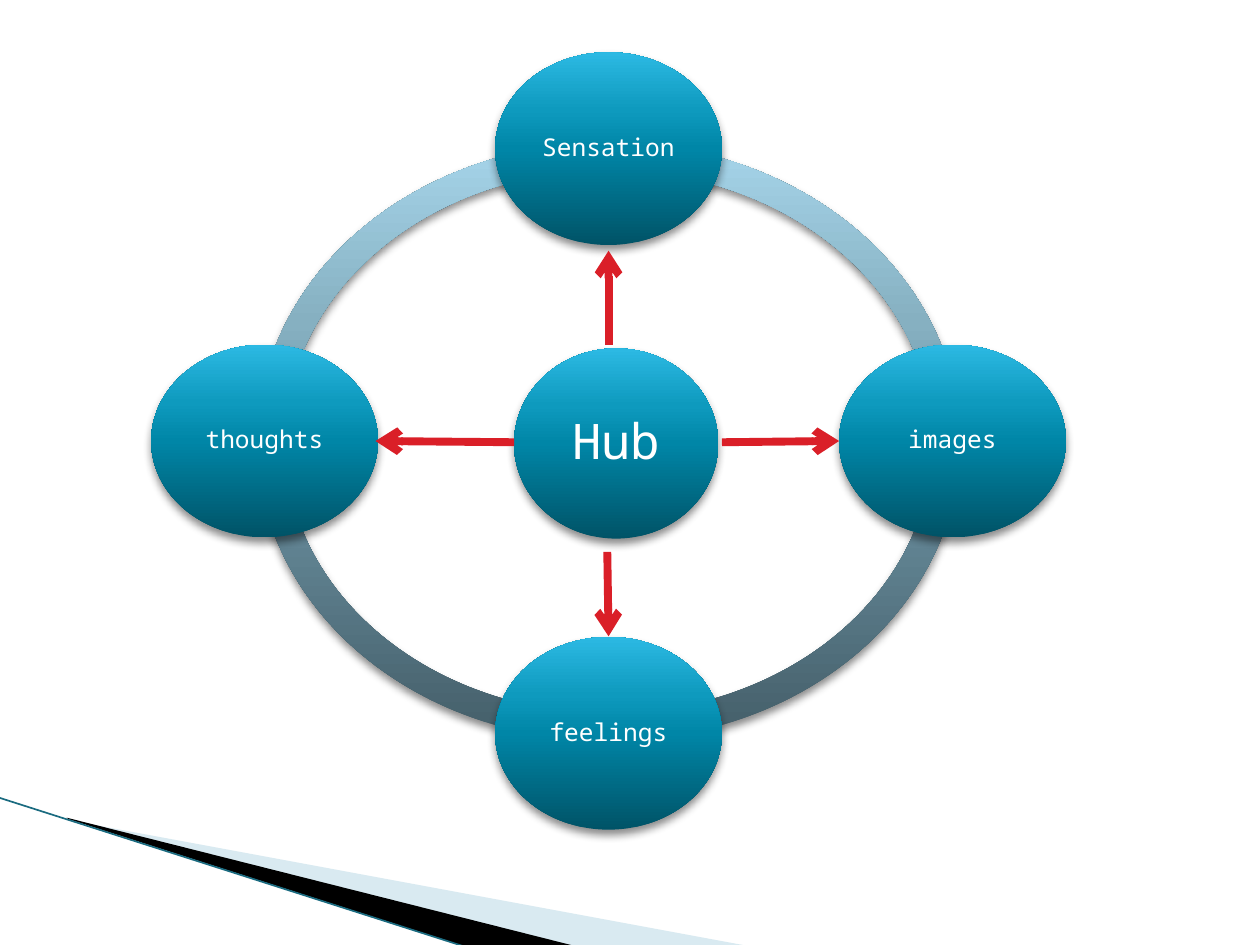
import pptx
import pptx.dml.color
import pptx.enum.shapes
import pptx.enum.text
import pptx.oxml
import pptx.oxml.ns
import pptx.util
from pptx.util import Inches

COLORS = {
    "arrow": "DA1F28",
    "text": "FFFFFF",
    "pale": "A0CBDC",
    "black": "000000",
    "edge": "1A6B80",
}
# Gradient stops, percent to colour, running from bottom to top
GRADIENTS = {
    "ring": {0: "445E69", 50: "6F96A7", 70: "86B0C1", 100: "A6D5EA"},
    "node": {0: "005367", 50: "0086A7", 70: "0E9ABE", 100: "2CB9E3"},
}
FONT = "Noto Sans Mono"
SHAPES = pptx.enum.shapes.MSO_SHAPE


def rgb(name):
    return pptx.dml.color.RGBColor.from_string(COLORS[name])


def element(xml):
    """Parse one drawing element, given without its namespace."""
    return pptx.oxml.parse_xml(xml.replace(">", " " + pptx.oxml.ns.nsdecls("a") + ">", 1))


class HubSlide:
    def __init__(self, deck):
        self.slide = deck.slides.add_slide(deck.slide_layouts[6])

    def shade(self, shape, gradient):
        """Vertical gradient and a soft shadow, without an outline."""
        stops = "".join(
            f'<a:gs pos="{pos * 1000}"><a:srgbClr val="{color}"/></a:gs>'
            for pos, color in GRADIENTS[gradient].items()
        )
        shape.line.fill.background()
        shape.shadow.inherit = False
        properties = shape._element.spPr
        properties.find(pptx.oxml.ns.qn("a:prstGeom")).addnext(element(
            f'<a:gradFill><a:gsLst>{stops}</a:gsLst><a:lin ang="16200000" scaled="0"/></a:gradFill>'
        ))
        effects = properties.find(pptx.oxml.ns.qn("a:effectLst"))
        effects.append(element(
            '<a:outerShdw blurRad="63500" dist="38100" dir="5400000" rotWithShape="0">'
            '<a:srgbClr val="000000"><a:alpha val="45000"/></a:srgbClr></a:outerShdw>'
        ))

    def polygon(self, points, color, alpha=None):
        corners = [(Inches(x), Inches(y)) for x, y in points]
        builder = self.slide.shapes.build_freeform(*corners[0])
        builder.add_line_segments(corners[1:], close=True)
        shape = builder.convert_to_shape()
        shape.shadow.inherit = False
        shape.line.fill.background()
        shape.fill.solid()
        shape.fill.fore_color.rgb = rgb(color)
        if alpha:
            tone = shape._element.spPr.find(".//" + pptx.oxml.ns.qn("a:srgbClr"))
            tone.append(element(f'<a:alpha val="{alpha * 1000}"></a:alpha>'))

    def arc(self, start, end):
        """Part of the ring; angles in degrees, clockwise from the right."""
        shape = self.slide.shapes.add_shape(
            SHAPES.BLOCK_ARC, Inches(2.04), Inches(1.13), Inches(5.58), Inches(4.75))
        for index, value in enumerate((start * 0.6, end * 0.6, 0.046)):
            shape.adjustments[index] = value
        self.shade(shape, "ring")

    def node(self, label, center, size, points):
        (x, y), (width, height) = center, size
        shape = self.slide.shapes.add_shape(
            SHAPES.OVAL, Inches(x - width / 2), Inches(y - height / 2),
            Inches(width), Inches(height))
        self.shade(shape, "node")
        frame = shape.text_frame
        frame.word_wrap = True
        frame.vertical_anchor = pptx.enum.text.MSO_ANCHOR.MIDDLE
        frame.margin_left = frame.margin_right = frame.margin_top = frame.margin_bottom = 0
        paragraph = frame.paragraphs[0]
        paragraph.alignment = pptx.enum.text.PP_ALIGN.CENTER
        paragraph.line_spacing = 0.9
        paragraph.space_after = pptx.util.Pt(points * 0.35)
        run = paragraph.add_run()
        run.text = label
        run.font.name = FONT
        run.font.size = pptx.util.Pt(points)
        run.font.color.rgb = rgb("text")

    def line(self, start, end, color, width, arrow=False):
        connector = self.slide.shapes.add_connector(
            pptx.enum.shapes.MSO_CONNECTOR.STRAIGHT,
            *(Inches(value) for value in start + end))
        connector.line.color.rgb = rgb(color)
        connector.line.width = pptx.util.Pt(width)
        if arrow:
            connector.line._get_or_add_ln().append(
                element('<a:tailEnd type="arrow"></a:tailEnd>'))
        connector._element.spPr.append(element("<a:effectLst></a:effectLst>"))


def main():
    deck = pptx.Presentation()
    deck.slide_width, deck.slide_height = Inches(10), Inches(7.5)
    hub = HubSlide(deck)

    # Corner decoration
    hub.polygon([(0.55, 6.51), (5.95, 7.51), (4.56, 7.51), (0.55, 6.5)], "pale", alpha=40)
    hub.polygon([(0.53, 6.49), (4.57, 7.51), (3.72, 7.52), (0.54, 6.5)], "black")
    hub.line((-0.01, 6.33), (3.71, 7.52), "edge", 0.95)

    # Ring in four quarters
    for start in (180, 90, 0, 270):
        hub.arc(start, (start + 90) % 360)

    # Hub and the four nodes around it
    hub.node("Hub", (4.89, 3.52), (1.62, 1.51), 28)
    middle_x, middle_y, reach_x, reach_y = 4.83, 3.5, 2.73, 2.32
    for label, across, down in (("Sensation", 0, -1), ("images", 1, 0),
                                ("feelings", 0, 1), ("thoughts", -1, 0)):
        center = (middle_x + across * reach_x, middle_y + down * reach_y)
        hub.node(label, center, (1.8, 1.53), 14)

    # Arrows from the hub outward
    for start, end in (((4.83, 2.74), (4.83, 1.99)), ((5.73, 3.51), (6.66, 3.5)),
                       ((4.82, 4.38), (4.83, 5.05)), ((4.08, 3.51), (2.98, 3.5))):
        hub.line(start, end, "arrow", 4.5, arrow=True)

    deck.save("out.pptx")


if __name__ == "__main__":
    main()
